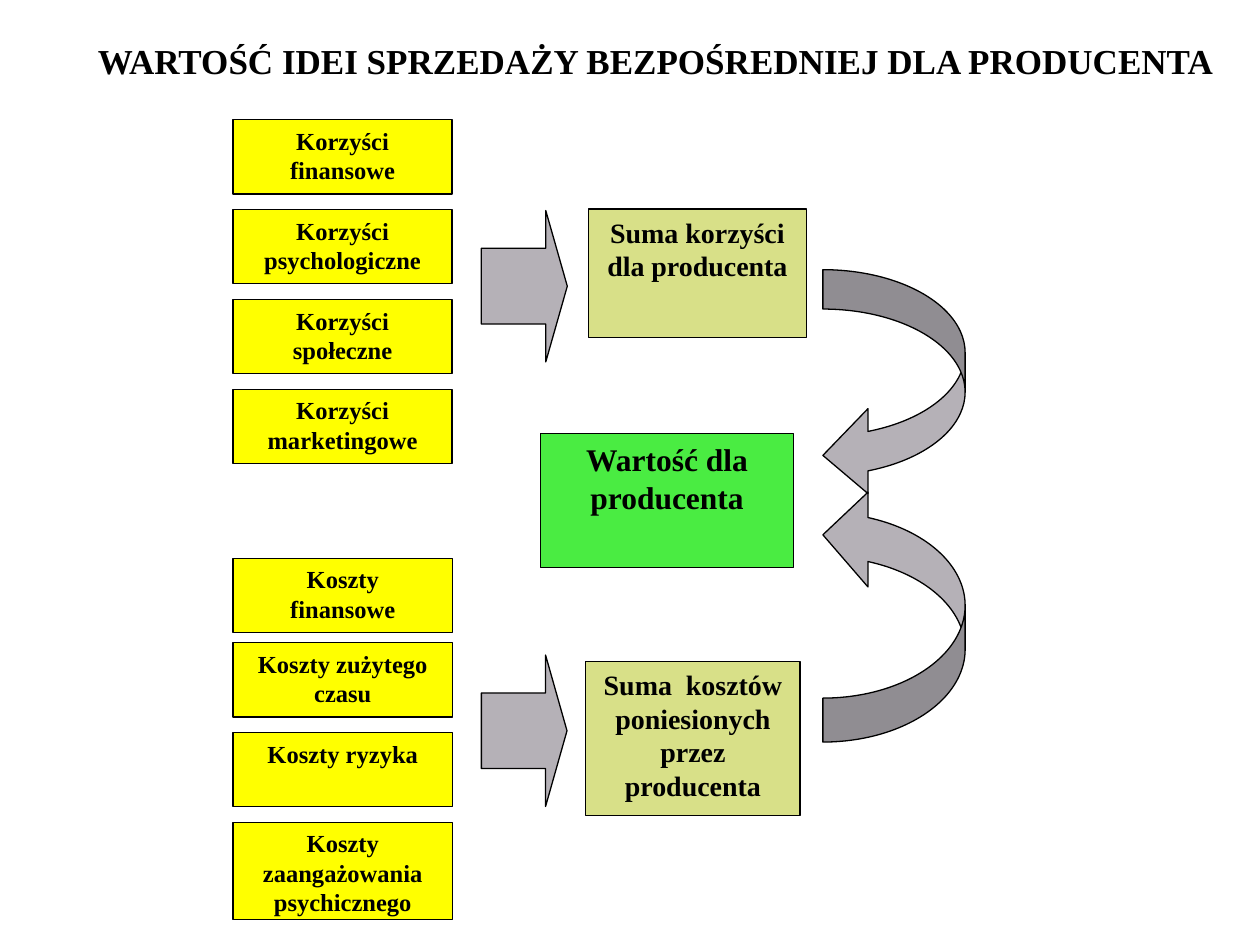
import pptx
import pptx.util
import pptx.dml.color
import pptx.enum.shapes
import pptx.enum.text

SHAPE = pptx.enum.shapes.MSO_SHAPE
ALIGN = pptx.enum.text.PP_ALIGN
ANCHOR = pptx.enum.text.MSO_ANCHOR
W, H = 10, 7.5
FONT = "Times New Roman"
YELLOW, OLIVE, GREEN, GREY, BLACK = "FFFF00", "D8E088", "4AEC42", "B5B1B7", "000000"
ROW_H, ROW_PITCH = 0.59, 0.713


def color(value):
    return pptx.dml.color.RGBColor.from_string(value)


def inches(box):
    return [pptx.util.Inches(v) for v in box]


def within(box, left, top, width, height):
    x, y, w, h = box
    return x + left * w, y + top * h, width * w, height * h


def write(tf, lines, size, align):
    tf.word_wrap = True
    for i, line in enumerate(lines):
        p = tf.paragraphs[0] if i == 0 else tf.add_paragraph()
        p.text = line
        p.alignment = align
        p.font.name = FONT
        p.font.size = pptx.util.Pt(size)
        p.font.bold = True
        p.font.color.rgb = color(BLACK)


def add_shape(s, kind, box, fill, adjustments=()):
    sp = s.shapes.add_shape(kind, *inches(box))
    sp.shadow.inherit = False
    sp.fill.solid()
    sp.fill.fore_color.rgb = color(fill)
    sp.line.color.rgb = color(BLACK)
    sp.line.width = pptx.util.Pt(0.75)
    for i, value in enumerate(adjustments):
        sp.adjustments[i] = value
    return sp


def add_label(s, box, fill, size, *lines):
    tf = add_shape(s, SHAPE.RECTANGLE, box, fill).text_frame
    tf.vertical_anchor = ANCHOR.TOP
    write(tf, lines, size, ALIGN.CENTER)


def add_title(s, box, text):
    tf = s.shapes.add_textbox(*inches(box)).text_frame
    tf.vertical_anchor = ANCHOR.MIDDLE
    write(tf, [text], 20, ALIGN.RIGHT)


def add_stack(s, left, top, width, rows):
    for i, (height, *lines) in enumerate(rows):
        box = left, top + i * ROW_PITCH, width, height
        add_label(s, box, YELLOW, 14, *lines)


def add_benefits(s, box):
    x, y, w, h = box
    add_stack(s, x, y, 0.382 * w, [
        (ROW_H, "Korzyści finansowe"),
        (ROW_H, "Korzyści psychologiczne"),
        (ROW_H, "Korzyści społeczne"),
        (ROW_H, "Korzyści marketingowe"),
    ])
    add_shape(s, SHAPE.RIGHT_ARROW, within(box, 0.433, 0.264, 0.15, 0.44), GREY, (0.5, 0.25))
    add_label(s, within(box, 0.62, 0.26, 0.38, 0.374), OLIVE, 16, "Suma korzyści", "dla producenta")


def add_costs(s, box):
    x, y, w, h = box
    width = 0.387 * w
    add_stack(s, x, y, width, [(ROW_H, "Koszty", "finansowe")])
    add_stack(s, x, y + 0.67, width, [
        (ROW_H, "Koszty zużytego czasu"),
        (ROW_H, "Koszty ryzyka"),
        (0.77, "Koszty zaangażowania psychicznego"),
    ])
    add_shape(s, SHAPE.RIGHT_ARROW, within(box, 0.438, 0.269, 0.151, 0.42), GREY, (0.5, 0.25))
    add_label(s, within(box, 0.622, 0.287, 0.378, 0.427), OLIVE, 16,
              "Suma  kosztów poniesionych przez producenta")


def add_value(s, box):
    add_label(s, within(box, 0, 0.347, 0.596, 0.283), GREEN, 18, "Wartość dla producenta")
    add_shape(s, SHAPE.CURVED_LEFT_ARROW, within(box, 0.665, 0, 0.335, 0.483), GREY,
              (0.277, 0.597, 0.317))
    sp = add_shape(s, SHAPE.CURVED_LEFT_ARROW, within(box, 0.665, 0.461, 0.335, 0.539), GREY,
                   (0.309, 0.666, 0.317))
    sp.element.spPr.xfrm.set("flipV", "1")


def main():
    prs = pptx.Presentation()
    prs.slide_width, prs.slide_height = inches((W, H))
    s = prs.slides.add_slide(prs.slide_layouts[6])
    add_title(s, (0.2, 0, 9.53, 0.96), "WARTOŚĆ IDEI SPRZEDAŻY BEZPOŚREDNIEJ DLA PRODUCENTA")
    add_benefits(s, (1.85, 0.95, 4.55, 2.73))
    add_costs(s, (1.85, 4.43, 4.5, 2.86))
    add_value(s, (4.29, 2.14, 3.37, 3.75))
    prs.save("out.pptx")


if __name__ == "__main__":
    main()
